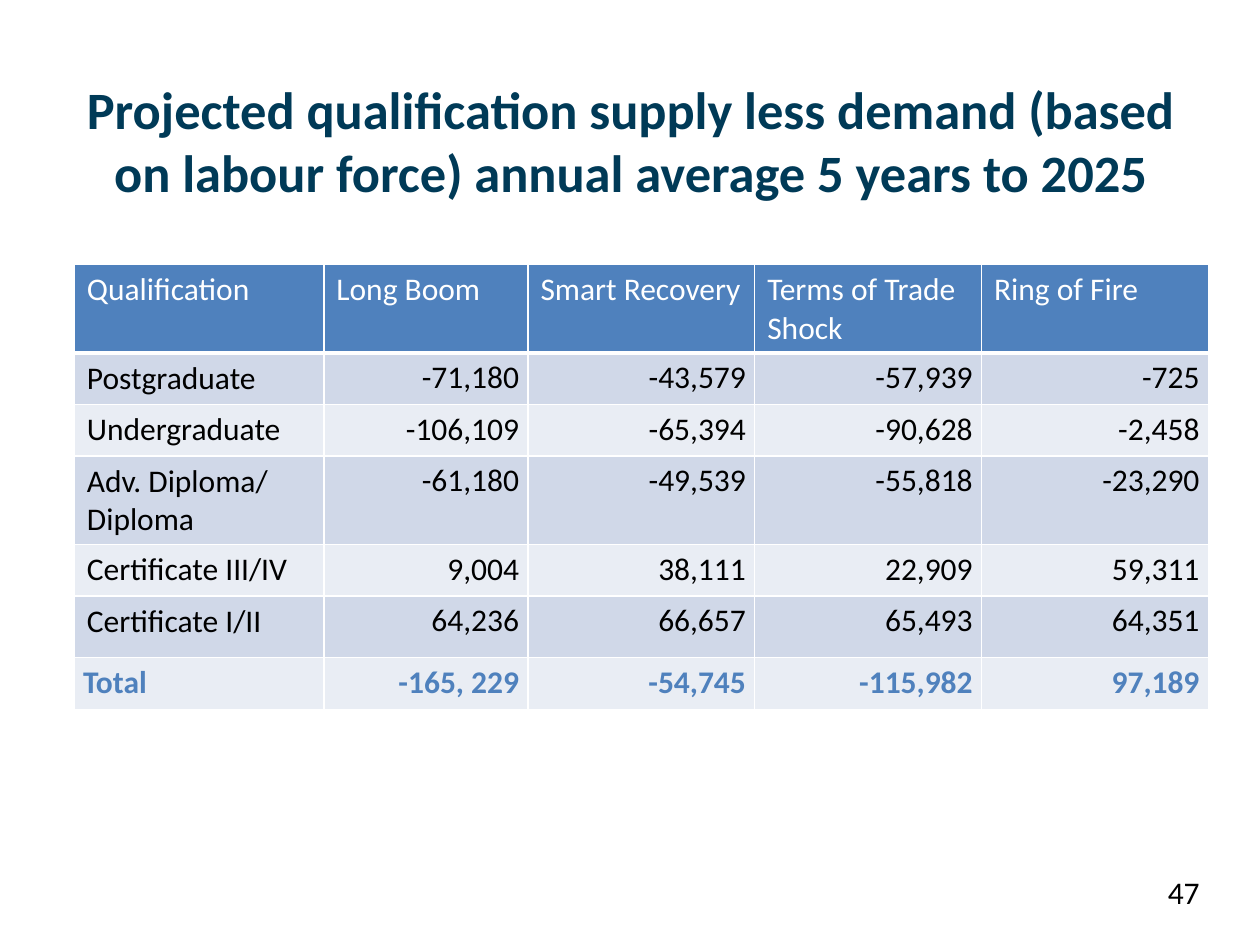
from lxml.etree import SubElement
from pptx import Presentation
from pptx.dml.color import RGBColor
from pptx.enum.text import MSO_ANCHOR, PP_ALIGN
from pptx.oxml.ns import qn
from pptx.util import Inches, Pt

HEADINGS = ["Qualification", "Long Boom", "Smart Recovery", "Terms of Trade Shock", "Ring of Fire"]
ROWS = [
    ["Postgraduate", "-71,180", "-43,579", "-57,939", "-725"],
    ["Undergraduate", "-106,109", "-65,394", "-90,628", "-2,458"],
    ["Adv. Diploma/ Diploma", "-61,180", "-49,539", "-55,818", "-23,290"],
    ["Certificate III/IV", "9,004", "38,111", "22,909", "59,311"],
    ["Certificate I/II", "64,236", "66,657", "65,493", "64,351"],
]
TOTAL = ["Total", "-165, 229", "-54,745", "-115,982", "97,189"]
COLUMN_WIDTHS = [1.98, 1.62, 1.8, 1.8, 1.8]
ROW_HEIGHTS = [0.41, 0.41, 0.41, 0.41, 0.41, 0.49, 0.41]


def color(value):
    return RGBColor.from_string(value)


def write_text(frame, text, font="Calibri", size=18, ink="000000", bold=False,
               align=PP_ALIGN.LEFT, line_spacing=None, space_after=None):
    paragraph = frame.paragraphs[0]
    paragraph.alignment = align
    paragraph.line_spacing = line_spacing
    if space_after is not None:
        paragraph.space_after = Pt(space_after)
    run = paragraph.add_run()
    run.text = text
    run.font.name = font
    run.font.size = Pt(size)
    run.font.bold = bold
    run.font.color.rgb = color(ink)


class SlideBuilder:
    accent = "4F81BD"
    title_ink = "003A57"
    white = "FFFFFF"
    bands = ["D0D8E8", "E9EDF4"]

    def __init__(self, slide):
        self.slide = slide

    def text(self, text, left, top, width, height, anchor=MSO_ANCHOR.TOP, **style):
        shape = self.slide.shapes.add_textbox(Inches(left), Inches(top), Inches(width), Inches(height))
        shape.text_frame.word_wrap = True
        shape.text_frame.vertical_anchor = anchor
        write_text(shape.text_frame, text, **style)

    def borders(self, cell, bottom):
        properties = cell._tc.get_or_add_tcPr()
        for side, width in (("L", 1), ("R", 1), ("T", 1), ("B", bottom)):
            line = SubElement(properties, qn(f"a:ln{side}"), w=str(Pt(width)))
            solid = SubElement(line, qn("a:solidFill"))
            SubElement(solid, qn("a:srgbClr"), val=self.white)

    def cell(self, cell, text, fill, bottom=1, tight=False, **style):
        self.borders(cell, bottom)
        cell.fill.solid()
        cell.fill.fore_color.rgb = color(fill)
        if tight:
            cell.margin_left = cell.margin_right = Inches(0.07)
            cell.margin_top = cell.margin_bottom = 0
            style["line_spacing"] = 1.15
        write_text(cell.text_frame, text, **style)

    def table(self, left, top, width, height):
        shape = self.slide.shapes.add_table(
            len(ROW_HEIGHTS), len(COLUMN_WIDTHS),
            Inches(left), Inches(top), Inches(width), Inches(height))
        table = shape.table
        for column, column_width in zip(table.columns, COLUMN_WIDTHS):
            column.width = Inches(column_width)
        for row, row_height in zip(table.rows, ROW_HEIGHTS):
            row.height = Inches(row_height)
        shape.height = Inches(height)

        for column, heading in enumerate(HEADINGS):
            self.cell(table.cell(0, column), heading, self.accent, bottom=3, ink=self.white)
        for row, values in enumerate(ROWS + [TOTAL]):
            is_total = values is TOTAL
            style = {"ink": self.accent, "bold": True, "space_after": 6} if is_total else {}
            for column, value in enumerate(values):
                self.cell(table.cell(row + 1, column), value, self.bands[row % 2],
                          tight=is_total or column > 0,
                          align=PP_ALIGN.RIGHT if column else PP_ALIGN.LEFT, **style)


def main():
    presentation = Presentation()
    presentation.slide_width = Inches(10)
    presentation.slide_height = Inches(7.5)
    builder = SlideBuilder(presentation.slides.add_slide(presentation.slide_layouts[6]))
    builder.text("Projected qualification supply less demand (based on labour force) "
                 "annual average 5 years to 2025",
                 0.51, 0.36, 9, 1.5, anchor=MSO_ANCHOR.MIDDLE, size=30,
                 ink=builder.title_ink, bold=True, align=PP_ALIGN.CENTER)
    builder.table(0.59, 2.1, 9, 3.51)
    builder.text("47", 9.17, 6.88, 0.83, 0.62)
    presentation.save("out.pptx")


if __name__ == "__main__":
    main()
